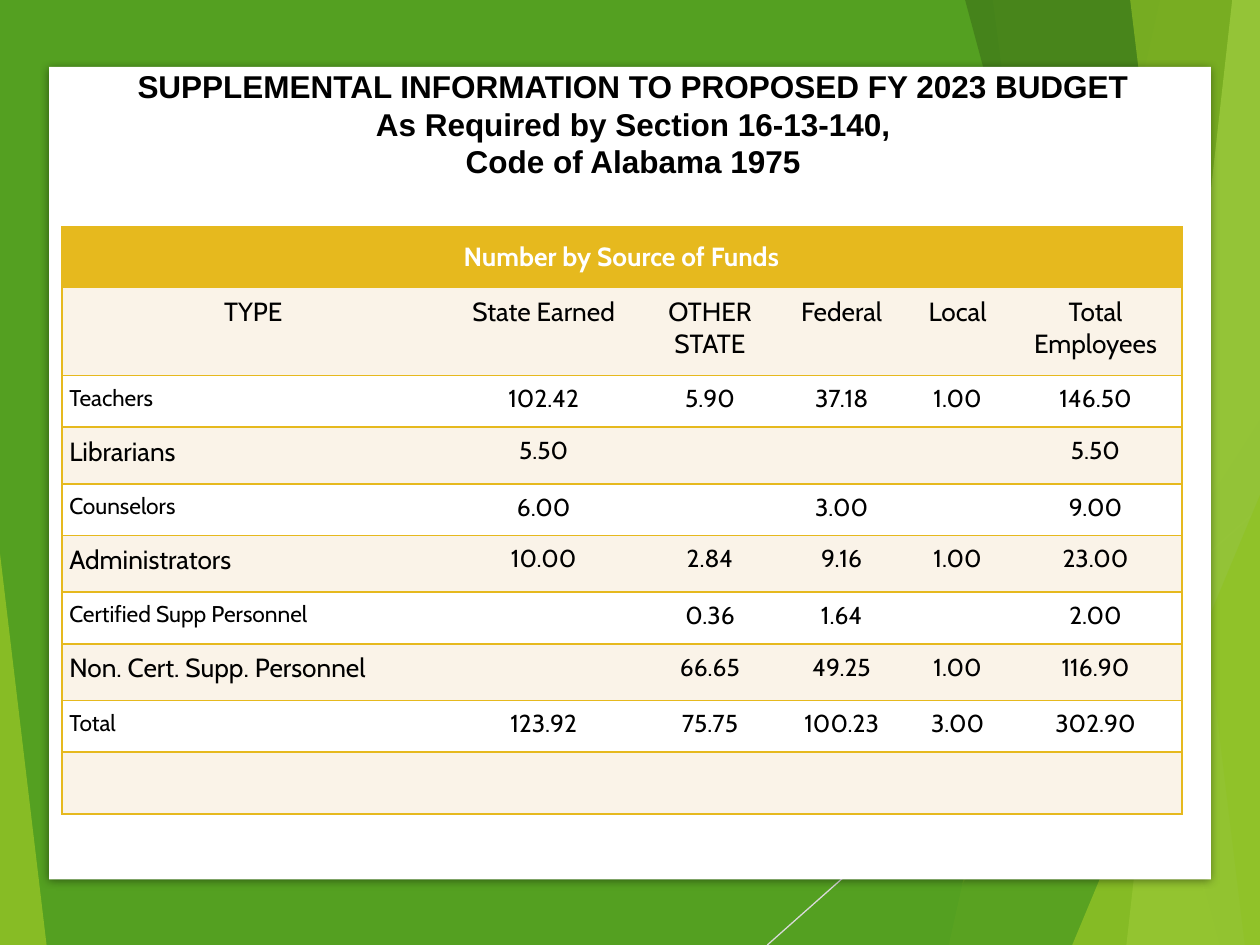
from lxml import etree
from pptx import Presentation
from pptx import util as u
from pptx.dml.color import RGBColor
from pptx.enum import shapes, text
from pptx.oxml import ns

W, H = 10, 7.5
GREEN, LIME = RGBColor(0x54, 0xA0, 0x21), RGBColor(0x90, 0xC2, 0x26)
FOREST, PALE = RGBColor(0x3F, 0x78, 0x19), RGBColor(0xC0, 0xE4, 0x74)
GOLD, CREAM = RGBColor(0xE6, 0xB9, 0x1E), RGBColor(0xFA, 0xF3, 0xE8)
WHITE, BLACK = RGBColor(255, 255, 255), RGBColor(0, 0, 0)
GREY = RGBColor(0xD9, 0xD9, 0xD9)

TITLE = ["SUPPLEMENTAL INFORMATION TO PROPOSED FY 2023 BUDGET",
         "As Required by Section 16-13-140,", "Code of Alabama 1975"]
ROWS = [
    ["", "Number by Source of Funds", "", "", "", ""],
    ["TYPE", "State Earned", "OTHER STATE", "Federal", "Local", "Total Employees"],
    ["Teachers", "102.42", "5.90", "37.18", "1.00", "146.50"],
    ["Librarians", "5.50", "", "", "", "5.50"],
    ["Counselors", "6.00", "", "3.00", "", "9.00"],
    ["Administrators", "10.00", "2.84", "9.16", "1.00", "23.00"],
    ["Certified Supp Personnel", "", "0.36", "1.64", "", "2.00"],
    ["Non. Cert. Supp. Personnel", "", "66.65", "49.25", "1.00", "116.90"],
    ["Total", "123.92", "75.75", "100.23", "3.00", "302.90"],
    [""] * 6,
]
COLS = [3.03, 1.58, 1.06, 1.03, 0.81, 1.38]
HEIGHTS = [0.48, 0.7] + [0.41, 0.45] * 3 + [0.41, 0.49]


def add_xml(parent, tag, **attrs):
    return etree.SubElement(parent, ns.qn(tag), attrs)


def add_colour(parent, colour, alpha=100):
    """Add a solid fill of the colour, with its opacity in percent."""
    clr = add_xml(add_xml(parent, "a:solidFill"), "a:srgbClr", val=str(colour))
    if alpha < 100:
        add_xml(clr, "a:alpha", val=str(alpha * 1000))


def paint(sp, colour, alpha=100):
    sp.shadow.inherit = False
    sp.line.fill.background()
    sp.fill.solid()
    sp.fill.fore_color.rgb = colour
    if alpha < 100:
        clr = sp.element.spPr.find(ns.qn("a:solidFill"))[0]
        add_xml(clr, "a:alpha", val=str(alpha * 1000))


def add_preset(s, kind, box, colour, alpha=100, apex=None):
    sp = s.shapes.add_shape(kind, *map(u.Inches, box))
    if apex is not None:
        sp.adjustments[0] = apex
    paint(sp, colour, alpha)
    return sp


def add_band(s, top, bottom, colour, alpha):
    """Band from a slanted left edge to the right edge of the slide."""
    fb = s.shapes.build_freeform(u.Inches(top), 0, scale=1.0)
    fb.add_line_segments([(u.Inches(x), u.Inches(y)) for x, y in
                          [(W, 0), (W, H), (bottom, H)]])
    paint(fb.convert_to_shape(), colour, alpha)


def add_backdrop(s):
    triangle = shapes.MSO_SHAPE.ISOSCELES_TRIANGLE
    add_preset(s, shapes.MSO_SHAPE.RECTANGLE, (0, 0, W, H), GREEN)
    ln = s.shapes.add_connector(shapes.MSO_CONNECTOR.STRAIGHT,
                                *map(u.Inches, (W, 4.03, 6.09, H)))
    ln.line.color.rgb, ln.line.width = GREY, u.Pt(0.75)
    add_xml(ln.element.spPr, "a:effectLst")
    # Translucent facets, from back to front
    add_band(s, 9.21, 7.53, LIME, 30)
    add_band(s, 7.88, 8.87, LIME, 20)
    add_preset(s, triangle, (7.33, 3.33, 2.67, 4.17), GREEN, 72, apex=1)
    add_band(s, 7.66, 9.68, FOREST, 70)
    add_band(s, 9.78, 8.94, PALE, 70)
    add_band(s, 8.97, 9.88, LIME, 65)
    add_preset(s, triangle, (8.51, 3.93, 1.49, 3.57), LIME, 80, apex=1)
    add_preset(s, triangle, (0, 4.39, 0.37, 3.11), LIME, 85, apex=0)


def add_panel(s, box):
    sp = add_preset(s, shapes.MSO_SHAPE.RECTANGLE, box, WHITE)
    effects = sp.element.spPr.find(ns.qn("a:effectLst"))
    shadow = add_xml(effects, "a:outerShdw", blurRad=str(u.Pt(5)),
                     dist=str(u.Pt(1.4)), dir="5400000", rotWithShape="0")
    clr = add_xml(shadow, "a:srgbClr", val=str(BLACK))
    add_xml(clr, "a:alpha", val="43000")


def set_borders(cell, sides):
    """Draw gold lines on the given sides and none on the others."""
    tcPr = cell._tc.get_or_add_tcPr()
    for i, side in enumerate("LRTB"):
        ln = add_xml(tcPr, f"a:ln{side}", w=str(u.Pt(1)))
        if side in sides:
            add_colour(ln, GOLD)
        else:
            add_xml(ln, "a:noFill")
        tcPr.insert(i, ln)


def write_cell(cell, words, size, colour, centred):
    cell.margin_left, cell.margin_right = u.Inches(0.06), u.Inches(0.05)
    cell.margin_top = cell.margin_bottom = u.Inches(0.07)
    p = cell.text_frame.paragraphs[0]
    p.text = words
    p.alignment = text.PP_ALIGN.CENTER if centred else text.PP_ALIGN.LEFT
    p.font.name, p.font.size, p.font.bold = "Cabin", u.Pt(size), False
    p.font.color.rgb = colour


def add_staff_table(s, box):
    table = s.shapes.add_table(len(ROWS), len(COLS), *map(u.Inches, box)).table
    table.first_row = table.horz_banding = False
    for col, width in zip(table.columns, COLS):
        col.width = u.Inches(width)
    for r, (row, height) in enumerate(zip(ROWS, HEIGHTS)):
        table.rows[r].height = u.Inches(height)
        for c, words in enumerate(row):
            cell = table.cell(r, c)
            set_borders(cell, "TB" + "L" * (c == 0) + "R" * (c == len(COLS) - 1))
            cell.fill.solid()
            cell.fill.fore_color.rgb = GOLD if r == 0 else CREAM if r % 2 else WHITE
            if words:
                # Labels alternate in size; all figures share one
                size = 15 if r < 2 else 14 if c else 15 if r % 2 else 13
                write_cell(cell, words, size, WHITE if r == 0 else BLACK,
                           r == 1 or (r > 1 and c > 0))
    # Heading across the fund columns
    head = table.cell(0, 1)
    head.merge(table.cell(0, len(COLS) - 1))
    set_right = head._tc.tcPr.find(ns.qn("a:lnR"))
    set_right.remove(set_right[0])
    add_colour(set_right, GOLD)
    head.vertical_anchor = text.MSO_ANCHOR.MIDDLE
    head.margin_left = u.Inches(0.16)
    head.text_frame.paragraphs[0].font.bold = True


def place_title(s, box):
    sp = s.shapes.title
    sp.left, sp.top, sp.width, sp.height = map(u.Inches, box)
    tf = sp.text_frame
    tf.word_wrap, tf.vertical_anchor = True, text.MSO_ANCHOR.TOP
    tf.auto_size = text.MSO_AUTO_SIZE.NONE
    p = tf.paragraphs[0]
    for i, line in enumerate(TITLE):
        if i:
            p.add_line_break()
        p.add_run().text = line
    p.alignment = text.PP_ALIGN.CENTER
    p.font.name, p.font.size, p.font.bold = "Arial", u.Pt(18), True
    p.font.color.rgb = BLACK
    # Bring the title in front of the panel
    sp.element.getparent().append(sp.element)


def main():
    prs = Presentation()
    prs.slide_width, prs.slide_height = u.Inches(W), u.Inches(H)
    s = prs.slides.add_slide(prs.slide_layouts[5])
    add_backdrop(s)
    add_panel(s, (0.39, 0.53, 9.22, 6.45))
    add_staff_table(s, (0.49, 1.8, sum(COLS), sum(HEIGHTS)))
    place_title(s, (0.58, 0.48, 8.89, 1.01))
    prs.save("out.pptx")


if __name__ == "__main__":
    main()
